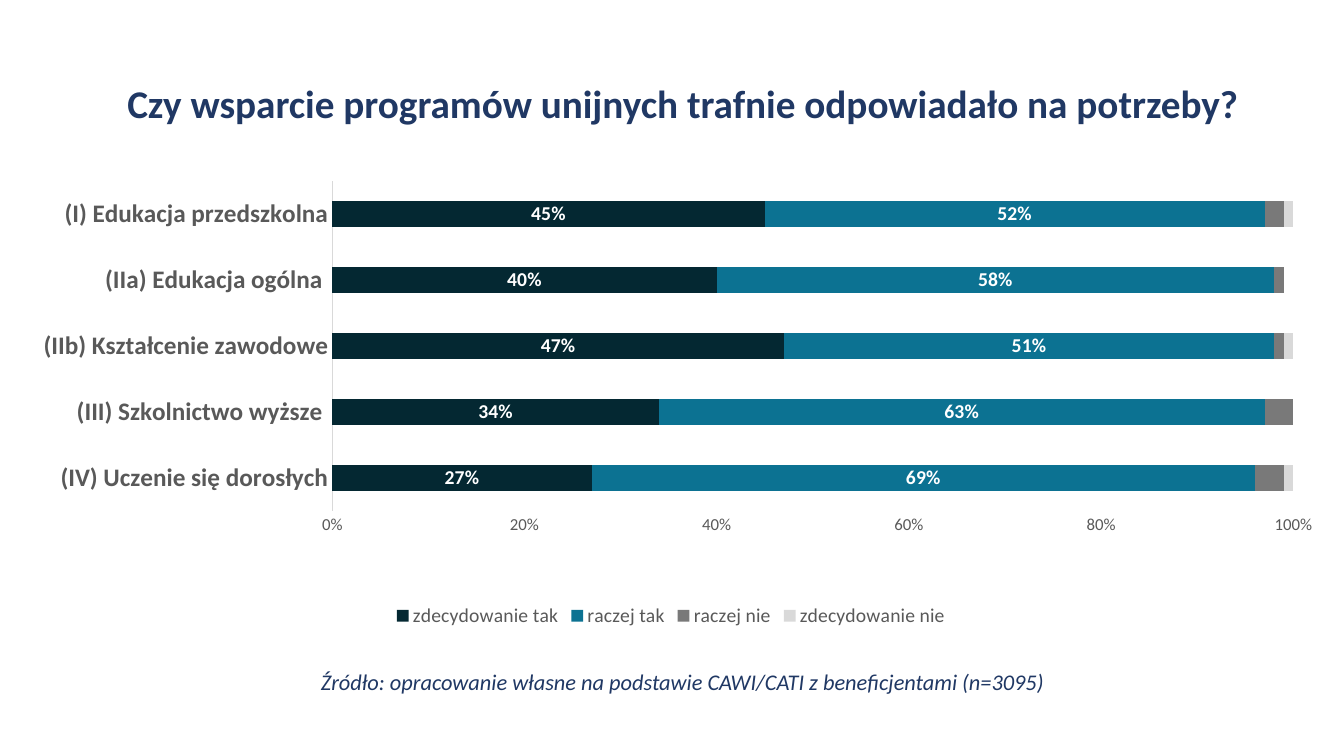
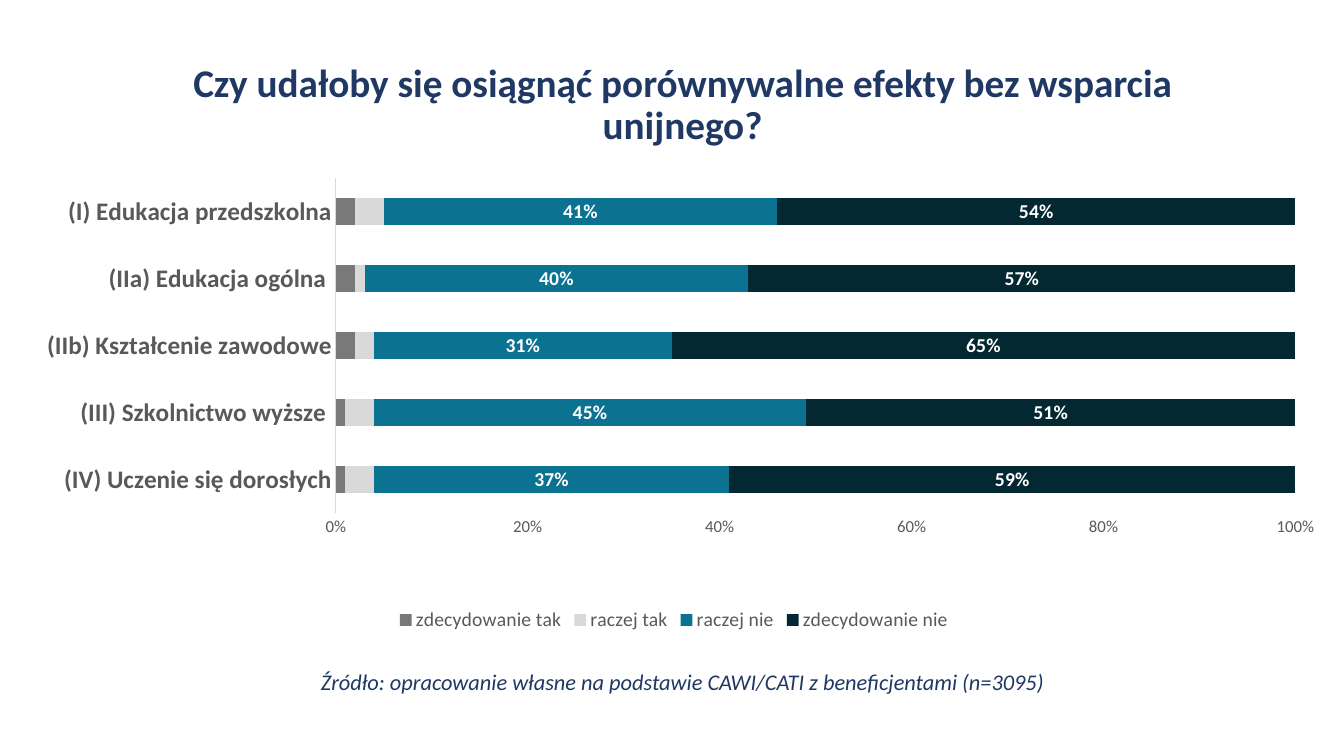
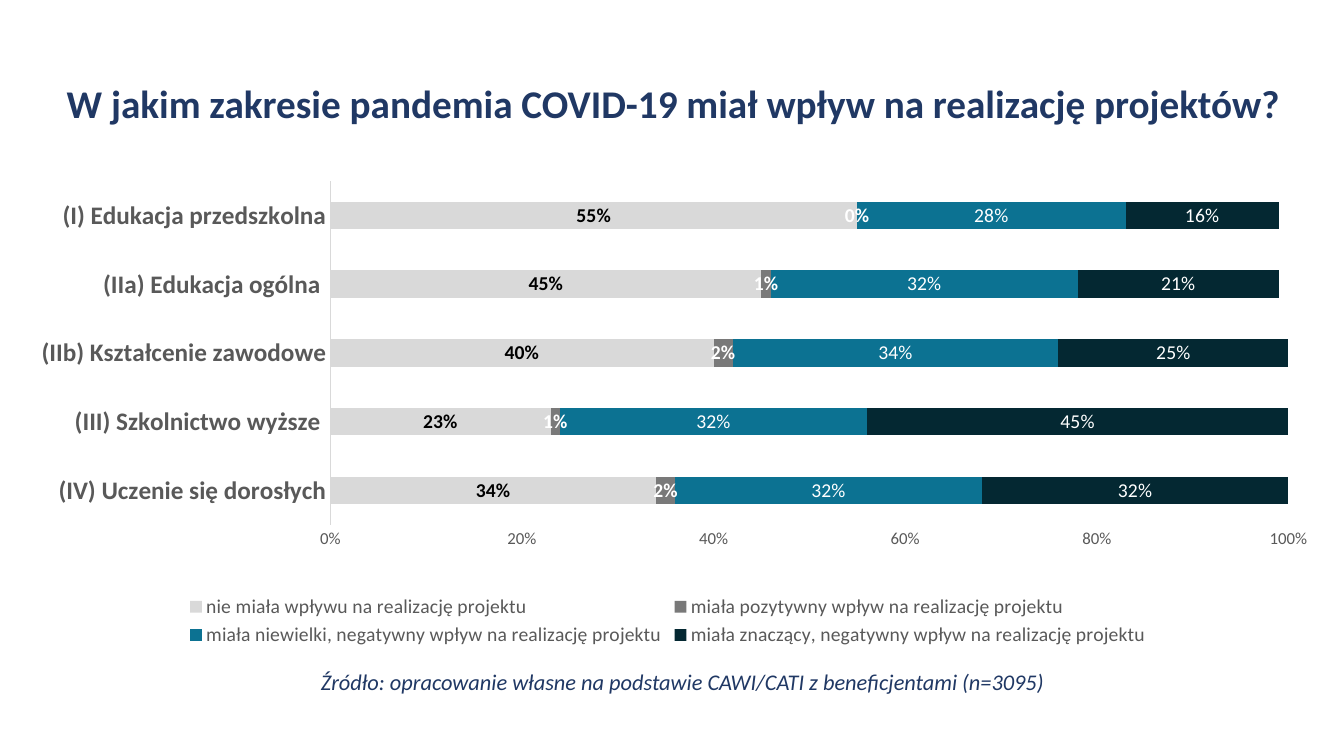
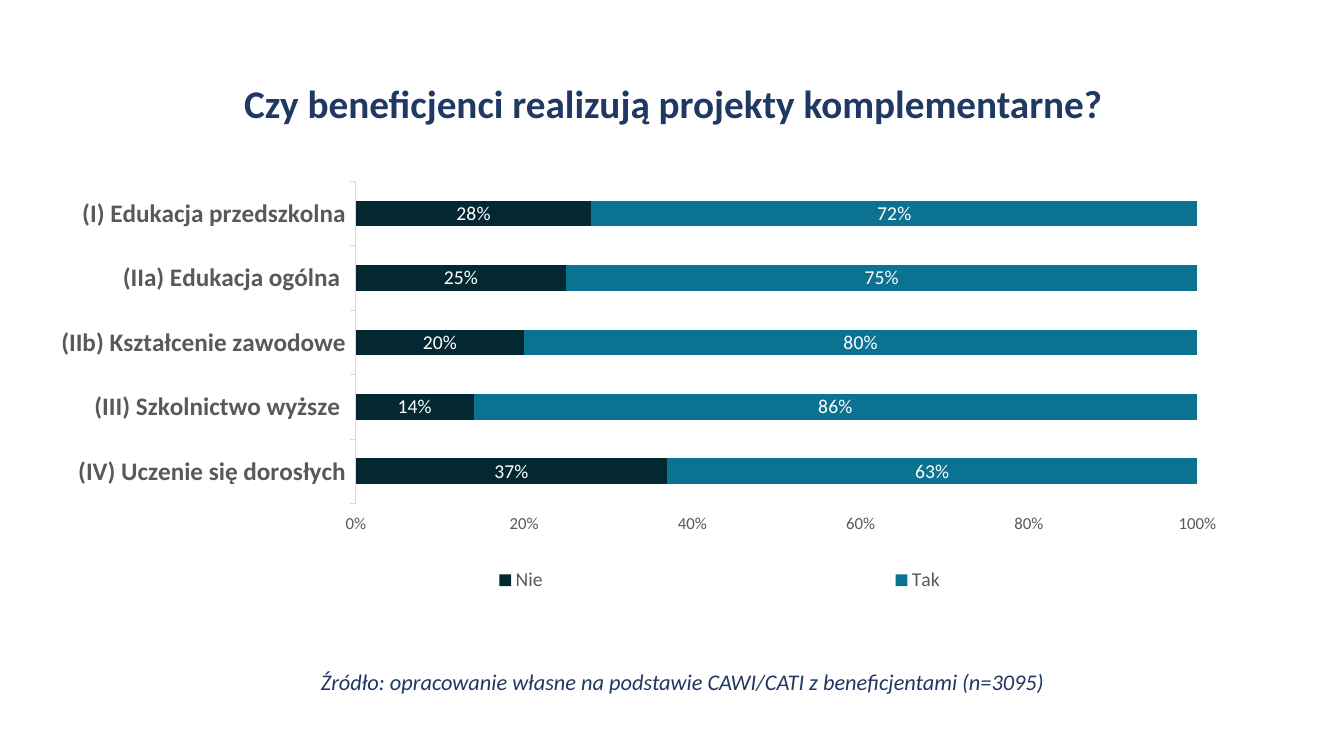
import dataclasses

import lxml.etree
import pptx
import pptx.chart.chart
import pptx.chart.data
import pptx.dml.color
import pptx.enum.chart
import pptx.enum.text
import pptx.oxml
import pptx.oxml.ns
import pptx.slide
import pptx.util

Inches = pptx.util.Inches
Pt = pptx.util.Pt

# Shared look
COLOURS = {
    "navy": "203864",
    "dark": "042832",
    "teal": "0C7292",
    "grey": "797979",
    "light": "D9D9D9",
    "text": "595959",
    "white": "FFFFFF",
    "black": "000000",
}
FONT = "Calibri"
PERCENT = "0%"
PLOT_LAYOUT = (0.241, 0.05, 0.735, 0.695)
SOURCE = "Źródło: opracowanie własne na podstawie CAWI/CATI z beneficjentami (n=3095)"
SOURCE_BOX = (1.02, 6.46, 11.5, 0.64)
NARROW_TITLE = (1.02, 0.73, 11.5, 0.64)
WIDE_TITLE = (0.47, 0.73, 12.41, 0.64)
CATEGORIES = (
    "(IV) Uczenie się dorosłych",
    "(III) Szkolnictwo wyższe ",
    "(IIb) Kształcenie zawodowe",
    "(IIa) Edukacja ogólna ",
    "(I) Edukacja przedszkolna",
)

Area = tuple[float, float, float, float]


@dataclasses.dataclass(frozen=True)
class Answer:
    name: str
    values: tuple[float, ...]
    colour: str
    label_colour: str | None = None
    label_bold: bool = False


@dataclasses.dataclass(frozen=True)
class Question:
    title: str
    title_box: Area
    chart_box: Area
    answers: tuple[Answer, ...]
    maximum: float = 1.0
    ticks: bool = False
    legend_layout: Area | None = None


QUESTIONS = (
    Question(
        "Czy wsparcie programów unijnych trafnie odpowiadało na potrzeby?",
        NARROW_TITLE,
        (0.17, 1.56, 12.97, 4.71),
        (
            Answer("zdecydowanie tak", (0.27, 0.34, 0.47, 0.40, 0.45), "dark", "white", True),
            Answer("raczej tak", (0.69, 0.63, 0.51, 0.58, 0.52), "teal", "white", True),
            Answer("raczej nie", (0.03, 0.03, 0.01, 0.01, 0.02), "grey"),
            Answer("zdecydowanie nie", (0.01, 0, 0.01, 0, 0.02), "light"),
        ),
    ),
    Question(
        "Czy udałoby się osiągnąć porównywalne efekty bez wsparcia unijnego?",
        NARROW_TITLE,
        (0.21, 1.53, 12.95, 4.78),
        (
            Answer("zdecydowanie tak", (0.01, 0.01, 0.02, 0.02, 0.02), "grey"),
            Answer("raczej tak", (0.03, 0.03, 0.02, 0.01, 0.03), "light"),
            Answer("raczej nie", (0.37, 0.45, 0.31, 0.40, 0.41), "teal", "white", True),
            Answer("zdecydowanie nie", (0.59, 0.51, 0.65, 0.57, 0.54), "dark", "white", True),
        ),
    ),
    Question(
        "W jakim zakresie pandemia COVID-19 miał wpływ na realizację projektów?",
        WIDE_TITLE,
        (0.16, 1.55, 12.93, 4.91),
        (
            Answer("nie miała wpływu na realizację projektu",
                   (0.34, 0.23, 0.40, 0.45, 0.55), "light", "black", True),
            Answer("miała pozytywny wpływ na realizację projektu",
                   (0.02, 0.01, 0.02, 0.01, 0), "grey", "white", True),
            Answer("miała niewielki, negatywny wpływ na realizację projektu",
                   (0.32, 0.32, 0.34, 0.32, 0.28), "teal", "white"),
            Answer("miała znaczący, negatywny wpływ na realizację projektu",
                   (0.32, 0.45, 0.25, 0.21, 0.16), "dark", "white"),
        ),
    ),
    Question(
        "Czy beneficjenci realizują projekty komplementarne?",
        WIDE_TITLE,
        (0.52, 1.57, 12.49, 4.6),
        (
            Answer("Nie", (0.37, 0.14, 0.20, 0.25, 0.28), "dark", "white"),
            Answer("Tak", (0.63, 0.86, 0.80, 0.75, 0.72), "teal", "white"),
        ),
        maximum=1.1,
        ticks=True,
        legend_layout=(0.08, 0.87, 0.9, 0.08),
    ),
)


def rgb(name: str) -> pptx.dml.color.RGBColor:
    return pptx.dml.color.RGBColor.from_string(COLOURS[name])


def style_font(font, *, size: float, colour: str, bold: bool = False, italic: bool = False) -> None:
    font.name = FONT
    font.size = Pt(size)
    font.bold = bold
    font.italic = italic
    font.color.rgb = rgb(colour)


def add_text(page: pptx.slide.Slide, text: str, area: Area, *, size: float,
             colour: str = "navy", bold: bool = False, italic: bool = False) -> None:
    box = page.shapes.add_textbox(*map(Inches, area))
    frame = box.text_frame
    frame.word_wrap = True
    frame.vertical_anchor = pptx.enum.text.MSO_ANCHOR.MIDDLE
    para = frame.paragraphs[0]
    para.alignment = pptx.enum.text.PP_ALIGN.CENTER
    para.line_spacing = 0.9
    span = para.add_run()
    span.text = text
    style_font(span.font, size=size, colour=colour, bold=bold, italic=italic)


def manual_layout(area: Area, *, inner: bool = False) -> lxml.etree._Element:
    """Build a chart layout from fractions of the chart's size."""
    settings = [("layoutTarget", "inner")] if inner else []
    settings += [("xMode", "edge"), ("yMode", "edge")]
    settings += list(zip("xywh", area))
    children = "".join(f'<c:{tag} val="{value}"/>' for tag, value in settings)
    return pptx.oxml.parse_xml(
        f'<c:layout {pptx.oxml.ns.nsdecls("c")}>'
        f"<c:manualLayout>{children}</c:manualLayout></c:layout>"
    )


def style_axes(chart: pptx.chart.chart.Chart, question: Question) -> None:
    tick_mark = pptx.enum.chart.XL_TICK_MARK
    for axis in (chart.category_axis, chart.value_axis):
        axis.major_tick_mark = tick_mark.OUTSIDE if question.ticks else tick_mark.NONE
        axis.minor_tick_mark = tick_mark.NONE
        axis.has_major_gridlines = False

    category_axis = chart.category_axis
    style_font(category_axis.tick_labels.font, size=18, colour="text", bold=True)
    category_axis.format.line.color.rgb = rgb("light")
    category_axis.format.line.width = Pt(0.75)

    value_axis = chart.value_axis
    style_font(value_axis.tick_labels.font, size=12, colour="text")
    value_axis.tick_labels.number_format = PERCENT
    value_axis.tick_labels.number_format_is_linked = False
    value_axis.format.line.fill.background()
    value_axis.minimum_scale = 0
    value_axis.maximum_scale = question.maximum
    value_axis.major_unit = 0.2


def style_answers(chart: pptx.chart.chart.Chart, question: Question) -> None:
    plot = chart.plots[0]
    plot.gap_width = 150
    plot.overlap = 100
    plot.vary_by_categories = False
    for series, answer in zip(plot.series, question.answers):
        series.format.fill.solid()
        series.format.fill.fore_color.rgb = rgb(answer.colour)
        series.invert_if_negative = False
        if answer.label_colour:
            labels = series.data_labels
            labels.show_value = True
            labels.number_format = PERCENT
            labels.number_format_is_linked = False
            labels.position = pptx.enum.chart.XL_LABEL_POSITION.CENTER
            style_font(labels.font, size=14, colour=answer.label_colour, bold=answer.label_bold)


def style_legend(chart: pptx.chart.chart.Chart, question: Question) -> None:
    chart.has_legend = True
    chart.legend.position = pptx.enum.chart.XL_LEGEND_POSITION.BOTTOM
    chart.legend.include_in_layout = False
    style_font(chart.legend.font, size=14, colour="text")
    if question.legend_layout:
        for old_layout in chart.element.xpath("c:chart/c:legend/c:layout"):
            old_layout.getparent().remove(old_layout)
        position = chart.element.xpath("c:chart/c:legend/c:legendPos")[0]
        position.addnext(manual_layout(question.legend_layout))


def add_answer_chart(page: pptx.slide.Slide, question: Question) -> None:
    data = pptx.chart.data.CategoryChartData(number_format=PERCENT)
    data.categories = CATEGORIES
    for answer in question.answers:
        data.add_series(answer.name, answer.values)
    chart = page.shapes.add_chart(
        pptx.enum.chart.XL_CHART_TYPE.BAR_STACKED, *map(Inches, question.chart_box), data
    ).chart
    chart.has_title = False
    style_font(chart.font, size=10, colour="black")
    style_axes(chart, question)
    style_answers(chart, question)
    style_legend(chart, question)

    # Same plot area proportions in every chart
    plot_area = chart.element.xpath("c:chart/c:plotArea")[0]
    for old_layout in plot_area.xpath("c:layout"):
        plot_area.remove(old_layout)
    plot_area.insert(0, manual_layout(PLOT_LAYOUT, inner=True))


def main() -> None:
    deck = pptx.Presentation()
    deck.slide_width = Inches(13.33)
    deck.slide_height = Inches(7.5)
    blank = deck.slide_layouts[6]
    for question in QUESTIONS:
        page = deck.slides.add_slide(blank)
        add_text(page, question.title, question.title_box, size=28, bold=True)
        add_answer_chart(page, question)
        add_text(page, SOURCE, SOURCE_BOX, size=16, italic=True)
    deck.save("out.pptx")


if __name__ == "__main__":
    main()
